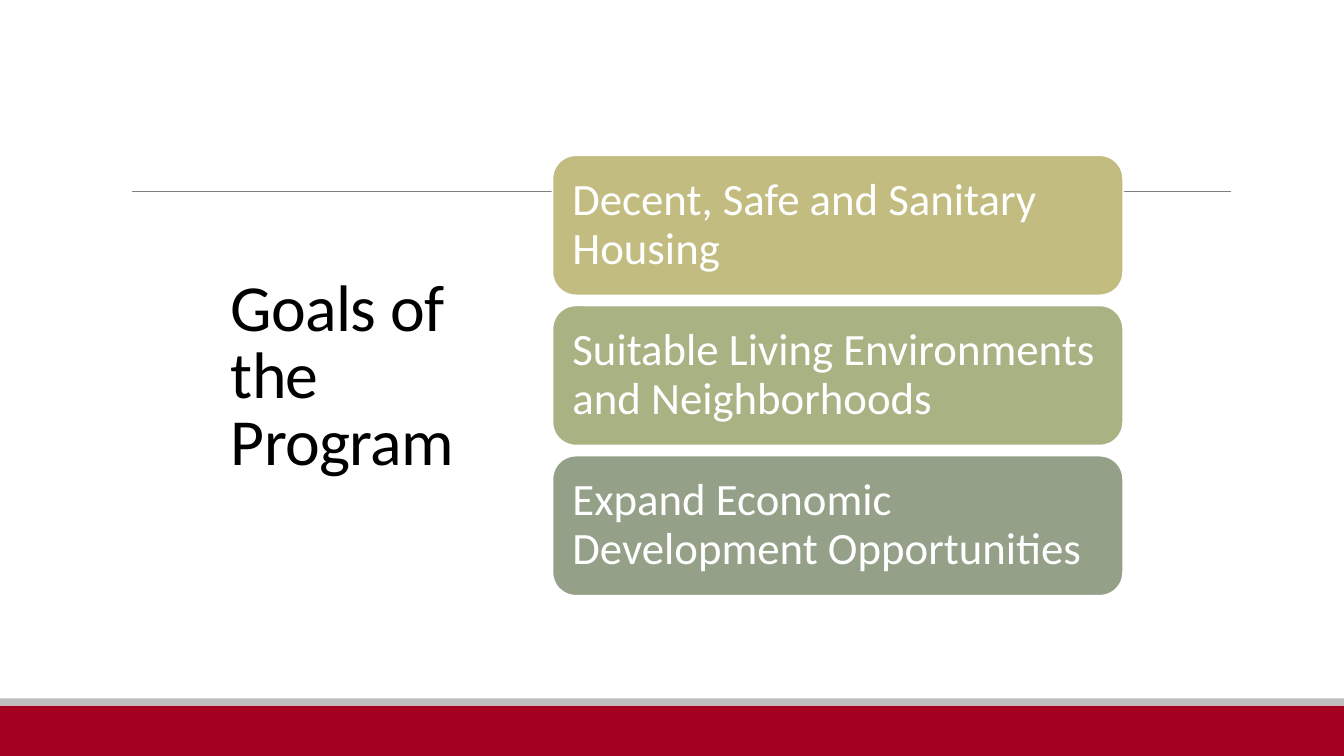
import pptx
import pptx.util
import pptx.dml.color
import pptx.enum.shapes
import pptx.enum.text
import lxml.etree
from dataclasses import dataclass

Inches = pptx.util.Inches
Pt = pptx.util.Pt
Shapes = pptx.enum.shapes.MSO_SHAPE


@dataclass(frozen=True)
class Theme:
    font: str = "Calibri"
    title_size: float = 47
    goal_size: float = 32
    title_color: str = "000000"
    light: str = "FFFFFF"
    band: str = "A50021"
    strip: str = "BFBFBF"
    rule: str = "808080"


theme = Theme()


def rgb(value):
    return pptx.dml.color.RGBColor.from_string(value)


def write_text(shape, text, *, size, color, line_spacing, inset, tracking=None):
    """Fill a shape with one left-aligned, vertically centred paragraph."""
    frame = shape.text_frame
    frame.word_wrap = True
    frame.vertical_anchor = pptx.enum.text.MSO_ANCHOR.MIDDLE
    frame.margin_left = frame.margin_right = Inches(inset[0])
    frame.margin_top = frame.margin_bottom = Inches(inset[1])
    paragraph = frame.paragraphs[0]
    paragraph.alignment = pptx.enum.text.PP_ALIGN.LEFT
    paragraph.line_spacing = line_spacing
    run = paragraph.add_run()
    run.text = text
    run.font.name = theme.font
    run.font.size = Pt(size)
    run.font.color.rgb = rgb(color)
    if tracking is not None:
        run.font._element.set("spc", str(round(tracking * 100)))


presentation = pptx.Presentation()
width, height = 13.33, 7.5
presentation.slide_width = Inches(width)
presentation.slide_height = Inches(height)
slide = presentation.slides.add_slide(presentation.slide_layouts[6])

# Footer bands
band_top, strip_height = 7, 0.07
for top, band_height, color in [
    (band_top, height - band_top, theme.band),
    (band_top - strip_height, strip_height, theme.strip),
]:
    band = slide.shapes.add_shape(
        Shapes.RECTANGLE, 0, Inches(top), presentation.slide_width, Inches(band_height)
    )
    band.shadow.inherit = False
    band.fill.solid()
    band.fill.fore_color.rgb = rgb(color)
    band.line.fill.background()

# Horizontal rule behind the goals
rule = slide.shapes.add_connector(
    pptx.enum.shapes.MSO_CONNECTOR.STRAIGHT,
    Inches(1.31), Inches(1.9), Inches(12.21), Inches(1.9),
)
rule.line.color.rgb = rgb(theme.rule)
rule.line.width = Pt(0.5)
lxml.etree.SubElement(rule._element.spPr, pptx.oxml.ns.qn("a:effectLst"))

# Title
title = slide.shapes.add_textbox(Inches(2.19), Inches(0.7), Inches(2.8), Inches(6.11))
write_text(title, "Goals of the Program", size=theme.title_size, color=theme.title_color,
           line_spacing=0.85, inset=(0.1, 0.05), tracking=-0.5)

# Goals, stacked at an equal pitch
goals = [
    ("Decent, Safe and Sanitary Housing", "C2BC80"),
    ("Suitable Living Environments and Neighborhoods", "A8B283"),
    ("Expand Economic Development Opportunities", "94A088"),
]
goals_left, goals_top, goal_width, goal_height, pitch = 5.48, 1.54, 5.66, 1.39, 1.49
for row, (text, color) in enumerate(goals):
    goal = slide.shapes.add_shape(
        Shapes.ROUNDED_RECTANGLE, Inches(goals_left), Inches(goals_top + row * pitch),
        Inches(goal_width), Inches(goal_height),
    )
    goal.shadow.inherit = False
    goal.fill.solid()
    goal.fill.fore_color.rgb = rgb(color)
    goal.line.color.rgb = rgb(theme.light)
    goal.line.width = Pt(1.25)
    write_text(goal, text, size=theme.goal_size, color=theme.light,
               line_spacing=0.9, inset=(0.13, 0.13))

presentation.save("out.pptx")
